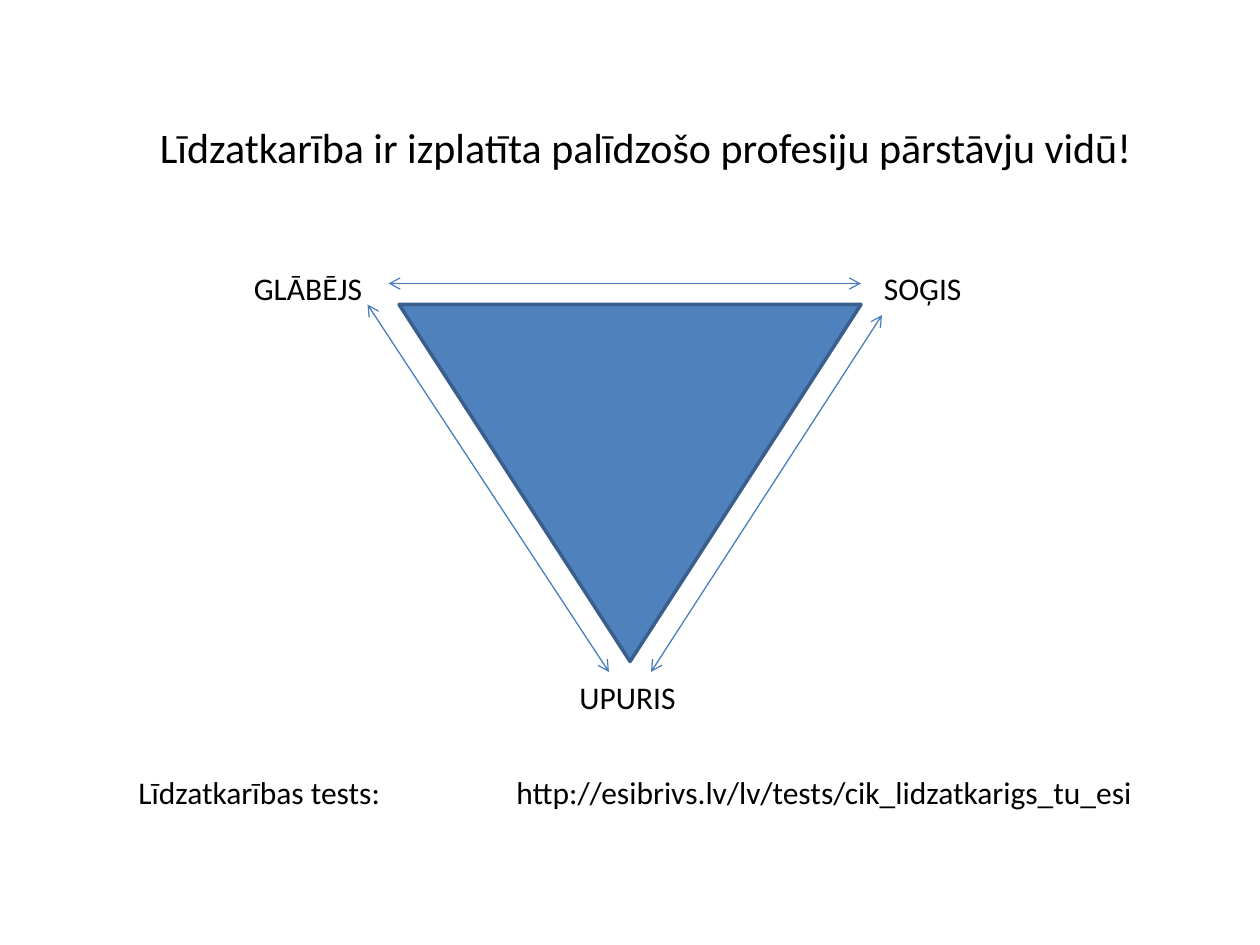
from dataclasses import dataclass

from lxml.etree import SubElement
from pptx import Presentation
from pptx.dml.color import RGBColor as RGB
from pptx.enum.shapes import MSO_CONNECTOR as LINE, MSO_SHAPE as SHAPE
from pptx.enum.text import MSO_AUTO_SIZE as FIT, PP_ALIGN as ALIGN
from pptx.oxml.ns import qn
from pptx.util import Inches, Pt


@dataclass(frozen=True)
class Theme:
    font: str = "Calibri"
    title: int = 24
    body: int = 18
    text: str = "000000"
    fill: str = "4F81BD"
    outline: str = "3A5F8C"
    arrow: str = "4B7EBC"


class Deck:
    COLS, ROWS = 120, 90

    def __init__(self, theme):
        self.theme = theme
        self.prs = Presentation()
        self.prs.slide_width, self.prs.slide_height = Inches(10), Inches(7.5)
        self.s = self.prs.slides.add_slide(self.prs.slide_layouts[6])

    def grid(self, *cells):
        units = (self.prs.slide_width / self.COLS, self.prs.slide_height / self.ROWS)
        return [round(c * units[i % 2]) for i, c in enumerate(cells)]

    def stroke(self, line, color, width):
        line.color.rgb = RGB.from_string(color)
        line.width = Pt(width)

    def triangle(self, *box, rotation=0):
        sp = self.s.shapes.add_shape(SHAPE.ISOSCELES_TRIANGLE, *self.grid(*box))
        sp.rotation = rotation
        sp.shadow.inherit = False
        sp.fill.solid()
        sp.fill.fore_color.rgb = RGB.from_string(self.theme.fill)
        self.stroke(sp.line, self.theme.outline, 2)

    def arrow(self, *ends):
        cx = self.s.shapes.add_connector(LINE.STRAIGHT, *self.grid(*ends))
        self.stroke(cx.line, self.theme.arrow, 0.75)
        ln = cx.line._get_or_add_ln()
        for end in ("a:headEnd", "a:tailEnd"):
            SubElement(ln, qn(end), type="arrow")
        SubElement(cx._element.spPr, qn("a:effectLst"))

    def text(self, text, *box, size=None, align=ALIGN.LEFT, tab=None):
        tf = self.s.shapes.add_textbox(*self.grid(*box)).text_frame
        for name, value in {"word_wrap": True, "auto_size": FIT.SHAPE_TO_FIT_TEXT}.items():
            setattr(tf, name, value)
        p = tf.paragraphs[0]
        p.alignment = align
        if tab:
            tabs = SubElement(p._p.get_or_add_pPr(), qn("a:tabLst"))
            SubElement(tabs, qn("a:tab"), pos=str(Inches(tab)), algn="l")
        r = p.add_run()
        r.text = text
        for name, value in {"name": self.theme.font, "size": Pt(size or self.theme.body)}.items():
            setattr(r.font, name, value)
        r.font.color.rgb = RGB.from_string(self.theme.text)


def main():
    theme = Theme()
    deck = Deck(theme)
    deck.triangle(38, 29, 44, 34, rotation=180)
    for role, col, row in (("GLĀBĒJS", 23, 25), ("SOĢIS", 83, 25), ("UPURIS", 54, 64)):
        deck.text(role, col, row, 16, 4.8)
    for ends in ((37, 27, 82, 27), (35, 29, 58, 64), (84, 30, 62, 64)):
        deck.arrow(*ends)
    deck.text("Līdzatkarība ir izplatīta palīdzošo profesiju pārstāvju vidū!",
              12, 11, 99, 6, size=theme.title, align=ALIGN.CENTER)
    deck.text("Līdzatkarības tests:\thttp://esibrivs.lv/lv/tests/cik_lidzatkarigs_tu_esi",
              12, 73, 100, 4.8, tab=3)
    deck.prs.save("out.pptx")


if __name__ == "__main__":
    main()
